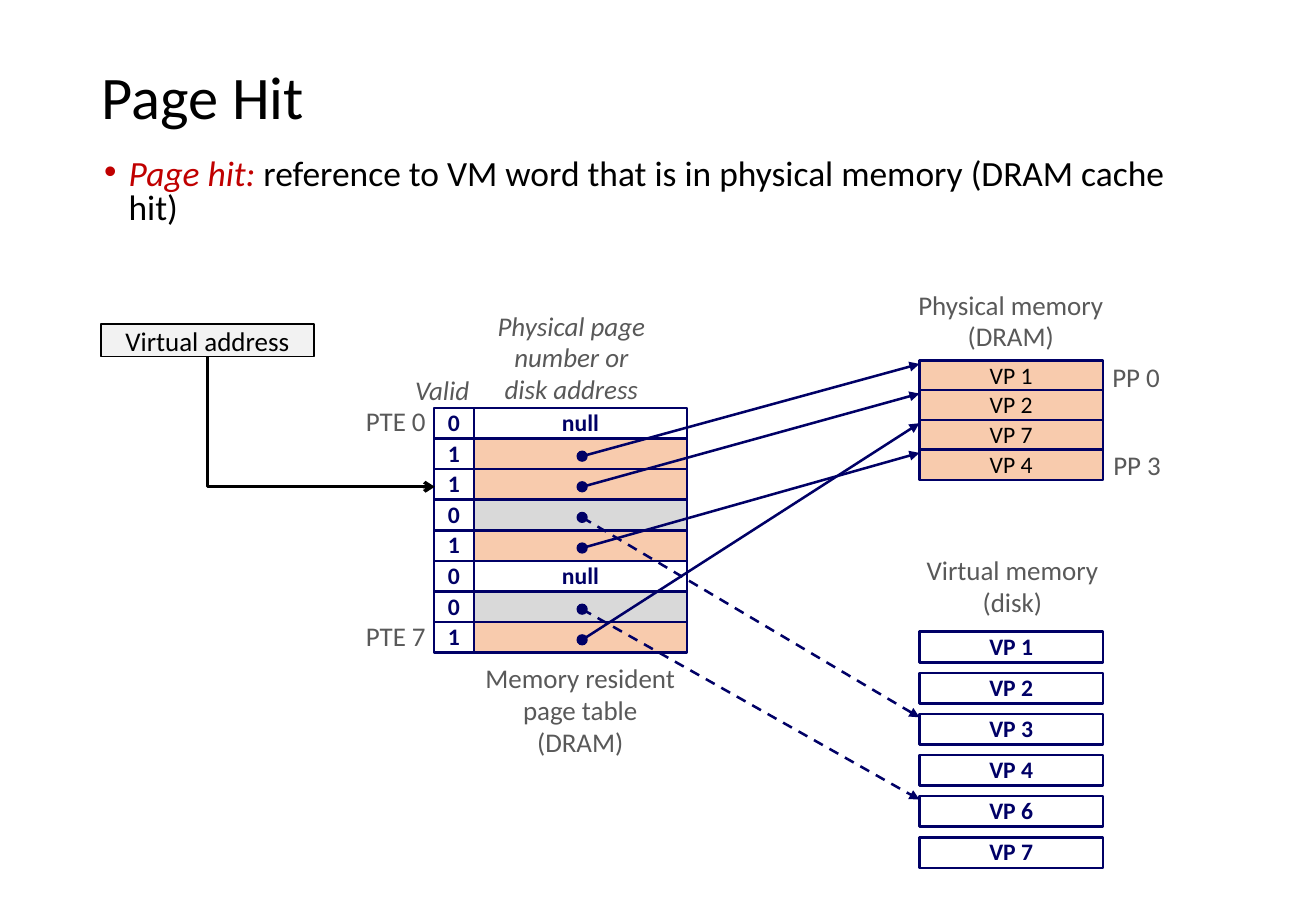
from lxml import etree
from pptx import Presentation
from pptx.dml.color import RGBColor
from pptx.enum.dml import MSO_LINE
from pptx.enum.shapes import MSO_CONNECTOR as CONNECTOR, MSO_SHAPE as SHAPE
from pptx.enum.text import MSO_ANCHOR as ANCHOR, PP_ALIGN as ALIGN
from pptx.oxml.ns import qn
from pptx.util import Cm, Pt

FONT = "Calibri"
BLACK = RGBColor(0x00, 0x00, 0x00)
WHITE = RGBColor(0xFF, 0xFF, 0xFF)
NAVY = RGBColor(0x00, 0x00, 0x66)
RED = RGBColor(0xC0, 0x00, 0x00)
GREY_TEXT = RGBColor(0x59, 0x59, 0x59)
GREY_FILL = RGBColor(0xD9, 0xD9, 0xD9)
PALE_GREY = RGBColor(0xF2, 0xF2, 0xF2)
PEACH = RGBColor(0xF8, 0xCB, 0xAD)

# All lengths below are centimetres.
TABLE_TOP, ROW_HEIGHT = 8.53, 0.64
VALID_LEFT, VALID_WIDTH = 9.07, 0.84
ADDRESS_LEFT, ADDRESS_WIDTH = 9.91, 4.45
DOT_X, DOT_SIZE, DOT_DROP = 12.17, 0.2, 0.05
MEMORY_LEFT, MEMORY_WIDTH = 19.22, 3.84
DRAM_TOP, DRAM_STEP = 7.54, 0.62
DISK_TOP, DISK_STEP = 13.21, 0.86
ARROW_DROP = 0.07

DRAM_PAGES = ["VP 1", "VP 2", "VP 7", "VP 4"]
DISK_PAGES = ["VP 1", "VP 2", "VP 3", "VP 4", "VP 6", "VP 7"]
# Valid bit and the virtual page that each entry refers to
PAGE_TABLE = [("0", None), ("1", "VP 1"), ("1", "VP 2"), ("0", "VP 3"),
              ("1", "VP 4"), ("0", None), ("0", "VP 6"), ("1", "VP 7")]

# Lines of text, left, top, width, height, alignment, italic
LABELS = [
    (["Valid"], 8.43, 7.7, 1.9, 0.94, ALIGN.LEFT, True),
    (["Physical page", "number or", "disk address"],
     10.08, 6.35, 3.73, 2.29, ALIGN.CENTER, True),
    (["PTE 0"], 7.37, 8.36, 1.78, 0.94, ALIGN.RIGHT, False),
    (["PTE 7"], 7.37, 12.85, 1.78, 0.94, ALIGN.RIGHT, False),
    (["Memory resident", "page table", "(DRAM)"],
     9.78, 13.74, 4.7, 2.26, ALIGN.CENTER, False),
    (["Physical memory", "(DRAM)"], 18.87, 5.92, 4.52, 1.6, ALIGN.CENTER, False),
    (["Virtual memory", "(disk)"], 19.02, 11.48, 4.29, 1.6, ALIGN.CENTER, False),
    (["PP 0"], 22.99, 7.44, 1.52, 0.94, ALIGN.CENTER, False),
    (["PP 3"], 23.01, 9.27, 1.52, 0.94, ALIGN.CENTER, False),
]


def style_font(font, size, color, bold=False, italic=False):
    font.name, font.size = FONT, Pt(size)
    font.bold, font.italic = bold, italic
    font.color.rgb = color


def write_lines(frame, lines, size, color, align, bold=False, italic=False,
                spacing=0.98):
    frame.vertical_anchor = ANCHOR.MIDDLE
    frame.word_wrap = False
    for index, line in enumerate(lines):
        para = frame.paragraphs[0] if index == 0 else frame.add_paragraph()
        para.text = line
        para.alignment, para.line_spacing = align, spacing
        style_font(para.font, size, color, bold, italic)


def add_text(page, lines, left, top, width, height, align,
             italic=False, size=16, color=GREY_TEXT, spacing=0.98):
    box = page.shapes.add_textbox(Cm(left), Cm(top), Cm(width), Cm(height))
    write_lines(box.text_frame, lines, size, color, align,
                italic=italic, spacing=spacing)


def add_block(page, kind, left, top, width, height, fill, edge=NAVY, weight=1.5):
    block = page.shapes.add_shape(kind, Cm(left), Cm(top), Cm(width), Cm(height))
    block.shadow.inherit = False
    block.fill.solid()
    block.fill.fore_color.rgb = fill
    block.line.color.rgb = edge
    block.line.width = Pt(weight)
    return block


def add_cell(page, left, top, width, fill, text="", color=NAVY, bold=True):
    cell = add_block(page, SHAPE.RECTANGLE, left, top, width, ROW_HEIGHT, fill)
    if text:
        write_lines(cell.text_frame, [text], 14, color, ALIGN.CENTER, bold)


def add_arrow(page, kind, start, end, color, weight, head, dashed=False):
    arrow = page.shapes.add_connector(kind, *map(Cm, start + end))
    arrow.line.color.rgb = color
    arrow.line.width = Pt(weight)
    if dashed:
        arrow.line.dash_style = MSO_LINE.DASH
    properties = arrow.element.spPr
    etree.SubElement(properties.find(qn("a:ln")), qn("a:tailEnd"), type=head)
    etree.SubElement(properties, qn("a:effectLst"))
    return arrow


def add_corner_arrow(page, start, end):
    """Draw an arrow that runs down and then right, with a single bend."""
    across, down = end[0] - start[0], end[1] - start[1]
    left = (start[0] + end[0] - down) / 2
    top = (start[1] + end[1] - across) / 2
    arrow = add_arrow(page, CONNECTOR.ELBOW, (left, top),
                      (left + down, top + across), BLACK, 2, "arrow")
    properties = arrow.element.spPr
    properties.find(qn("a:prstGeom")).set("prst", "bentConnector2")
    frame = properties.find(qn("a:xfrm"))
    frame.set("rot", "16200000")
    frame.set("flipH", "1")


def add_definition(page):
    box = page.shapes.add_textbox(Cm(1.93), Cm(3.2), Cm(23.09), Cm(1.68))
    box.text_frame.word_wrap = True
    para = box.text_frame.paragraphs[0]
    para.line_spacing, para.space_before = 0.8, Pt(8.1)
    for text, color, italic in [
            ("Page hit: ", RED, True),
            ("reference to VM word that is in physical memory (DRAM cache hit)",
             BLACK, False)]:
        span = para.add_run()
        span.text = text
        style_font(span.font, 21, color, italic=italic)
    layout = para._p.get_or_add_pPr()
    layout.set("marL", str(Cm(0.51)))
    layout.set("indent", str(Cm(-0.51)))
    etree.SubElement(layout, qn("a:buFont"), typeface="Arial")
    etree.SubElement(layout, qn("a:buChar"), char="•")


def add_memory(page, names, top, step, fill, color, bold):
    """Draw a column of pages and return the top of each page by name."""
    tops = {name: top + index * step for index, name in enumerate(names)}
    for name, page_top in tops.items():
        add_cell(page, MEMORY_LEFT, page_top, MEMORY_WIDTH, fill, name, color, bold)
    return tops


def add_page_table(page, dram_tops, disk_tops):
    links = []
    for index, (valid, target) in enumerate(PAGE_TABLE):
        top = TABLE_TOP + index * ROW_HEIGHT
        cached = valid == "1"
        fill = PEACH if cached else GREY_FILL if target else WHITE
        add_cell(page, VALID_LEFT, top, VALID_WIDTH, WHITE, valid)
        add_cell(page, ADDRESS_LEFT, top, ADDRESS_WIDTH, fill,
                 "" if target else "null")
        if target:
            target_top = (dram_tops if cached else disk_tops)[target]
            links.append((top + ROW_HEIGHT / 2 + DOT_DROP,
                          target_top + ARROW_DROP, not cached))
    for dot_y, target_y, dashed in links:
        add_arrow(page, CONNECTOR.STRAIGHT, (DOT_X, dot_y),
                  (MEMORY_LEFT, target_y), NAVY, 1.5, "triangle", dashed)
        add_block(page, SHAPE.OVAL, DOT_X - DOT_SIZE / 2, dot_y - DOT_SIZE / 2,
                  DOT_SIZE, DOT_SIZE, NAVY, weight=1)


def add_virtual_address(page):
    block = add_block(page, SHAPE.RECTANGLE, 2.11, 6.78, 4.45, 0.68,
                      PALE_GREY, BLACK, 1)
    write_lines(block.text_frame, ["Virtual address"], 16, BLACK,
                ALIGN.CENTER, spacing=1.0)
    add_corner_arrow(page, (4.34, 7.45), (9.09, 10.18))


def main():
    deck = Presentation()
    deck.slide_width, deck.slide_height = Cm(27.51), Cm(19.05)
    page = deck.slides.add_slide(deck.slide_layouts[6])
    add_text(page, ["Page Hit"], 1.88, 0.99, 23.01, 2.18, ALIGN.LEFT,
             size=35.8, color=BLACK, spacing=0.9)
    add_definition(page)
    dram_tops = add_memory(page, DRAM_PAGES, DRAM_TOP, DRAM_STEP, PEACH, BLACK, False)
    disk_tops = add_memory(page, DISK_PAGES, DISK_TOP, DISK_STEP, WHITE, NAVY, True)
    add_page_table(page, dram_tops, disk_tops)
    for label in LABELS:
        add_text(page, *label)
    add_virtual_address(page)
    deck.save("out.pptx")


if __name__ == "__main__":
    main()
